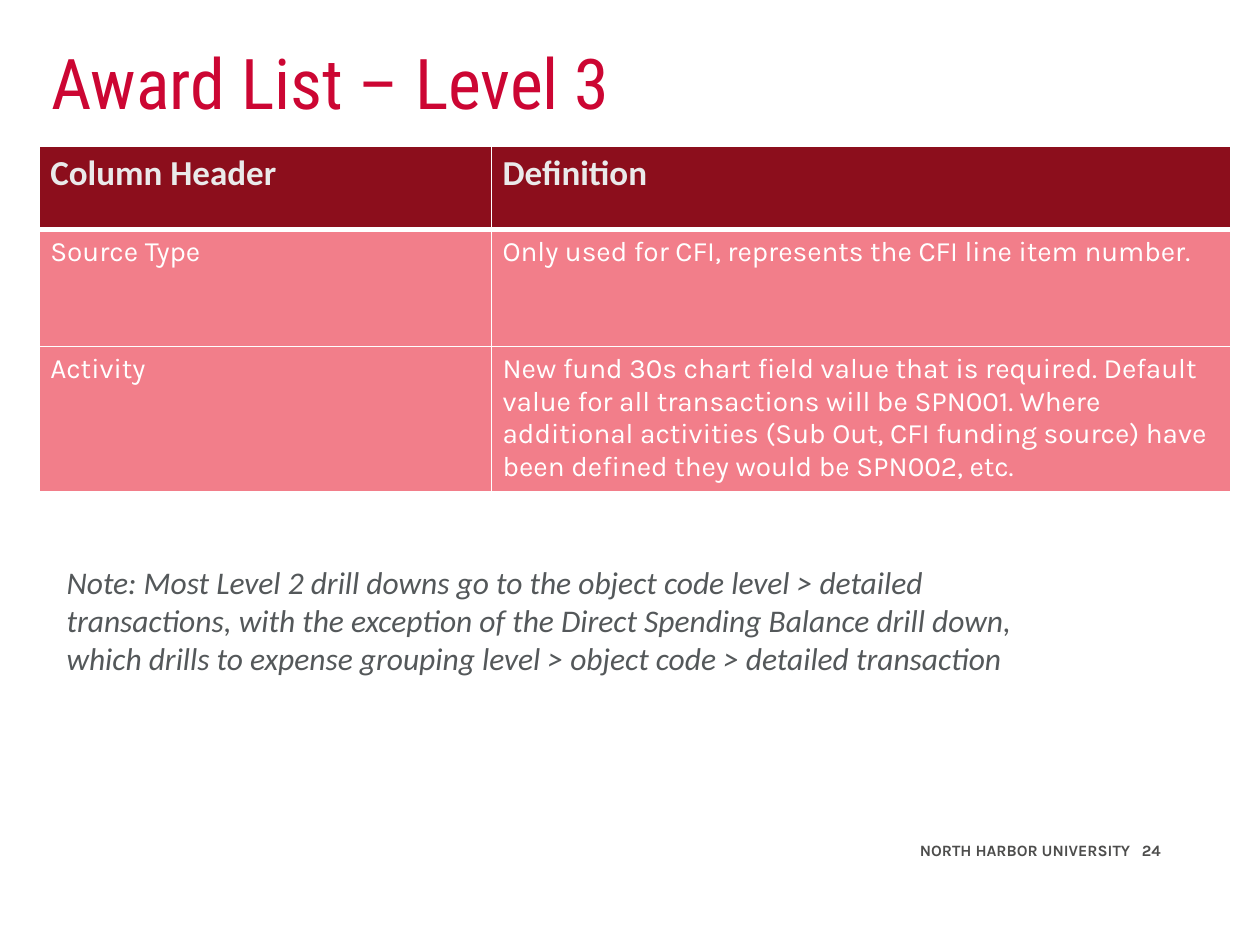
from dataclasses import dataclass

import pptx
import pptx.dml.color
import pptx.enum.text
import pptx.oxml
import pptx.oxml.ns
import pptx.util

Inches = pptx.util.Inches
Pt = pptx.util.Pt
RGB = pptx.dml.color.RGBColor.from_string
PP_ALIGN = pptx.enum.text.PP_ALIGN
ANCHOR = pptx.enum.text.MSO_ANCHOR


@dataclass(frozen=True)
class Theme:
    header_fill: str = "8C0E1C"
    body_fill: str = "F27E8A"
    border: str = "FFFFFF"
    title: tuple = ("Roboto Condensed", 40, "CC0633", {"bold": False})
    header: tuple = ("Calibri", 20, "EAEAEA", {"bold": True})
    body: tuple = ("Karla", 16, "FFFFFF", {"bold": False})
    note: tuple = ("Calibri", 18, "54585A", {"italic": True})
    footer: tuple = ("Karla", 9, "4D4D4C", {"bold": True})


theme = Theme()


def add_run(p, text, style):
    name, size, color, flags = style
    r = p.add_run()
    r.text = text
    for attr, value in {"name": name, "size": Pt(size), **flags}.items():
        setattr(r.font, attr, value)
    r.font.color.rgb = RGB(color)
    return r


def set_borders(cell, widths):
    """Add solid borders; widths maps the sides L, R, T, B, in that order, to points."""
    tcPr = cell._tc.get_or_add_tcPr()
    ns = pptx.oxml.ns.nsdecls("a")
    for i, (side, width) in enumerate(widths.items()):
        tcPr.insert(i, pptx.oxml.parse_xml(
            f'<a:ln{side} {ns} w="{Pt(width)}"><a:solidFill>'
            f'<a:srgbClr val="{theme.border}"/></a:solidFill></a:ln{side}>'))


prs = pptx.Presentation()
prs.slide_width, prs.slide_height = Inches(10), Inches(7.5)
s = prs.slides.add_slide(prs.slide_layouts[5])

# Title
title = s.shapes.title
title.left, title.top = Inches(0.31), Inches(0.36)
title.width, title.height = Inches(8.62), Inches(0.66)
tf = title.text_frame
tf.vertical_anchor = ANCHOR.MIDDLE
tf.auto_size = pptx.enum.text.MSO_AUTO_SIZE.NONE
p = tf.paragraphs[0]
p.alignment = PP_ALIGN.LEFT
p.line_spacing = 0.9
add_run(p, "Award List – Level 3", theme.title)

# Definitions table
rows = [
    ("Column Header", "Definition"),
    ("Source Type", "Only used for CFI, represents the CFI line item number."),
    ("Activity",
     "New fund 30s chart field value that is required. Default value for all "
     "transactions will be SPN001. Where additional activities (Sub Out, CFI "
     "funding source) have been defined they would be SPN002, etc."),
]
col_widths = (3.59, 5.87)
row_heights = (0.66, 0.93, 1.15)
table = s.shapes.add_table(
    len(rows), len(col_widths), Inches(0.31), Inches(1.16),
    Inches(sum(col_widths)), Inches(sum(row_heights))).table
for column, width in zip(table.columns, col_widths):
    column.width = Inches(width)
for i, (row, texts) in enumerate(zip(table.rows, rows)):
    row.height = Inches(row_heights[i])
    is_header = i == 0
    for cell, text in zip(row.cells, texts):
        cell.margin_left = cell.margin_right = Inches(0.09)
        cell.margin_top = cell.margin_bottom = Inches(0.05)
        cell.fill.solid()
        cell.fill.fore_color.rgb = RGB(theme.header_fill if is_header else theme.body_fill)
        add_run(cell.text_frame.paragraphs[0], text,
                theme.header if is_header else theme.body)
        set_borders(cell, {"L": 1, "R": 1, "T": 3 if i == 1 else 1,
                           "B": 3 if is_header else 1})

# Note
note = s.shapes.add_textbox(Inches(0.43), Inches(4.42), Inches(7.98), Inches(1.31))
tf = note.text_frame
tf.word_wrap = True
add_run(tf.paragraphs[0],
        "Note: Most Level 2 drill downs go to the object code level > detailed "
        "transactions, with the exception of the Direct Spending Balance drill down, "
        "which drills to expense grouping level > object code > detailed transaction",
        theme.note)

# Footer: the space before the page number is widened by character spacing
footer = s.shapes.add_textbox(Inches(6.6), Inches(6.55), Inches(2.71), Inches(0.4))
tf = footer.text_frame
tf.word_wrap = True
tf.vertical_anchor = ANCHOR.MIDDLE
p = tf.paragraphs[0]
p.alignment = PP_ALIGN.RIGHT
add_run(p, "NORTH HARBOR UNIVERSITY", theme.footer)
gap = add_run(p, " ", theme.footer)
gap.font._element.set("spc", "450")
add_run(p, "24", theme.footer)

prs.save("out.pptx")
